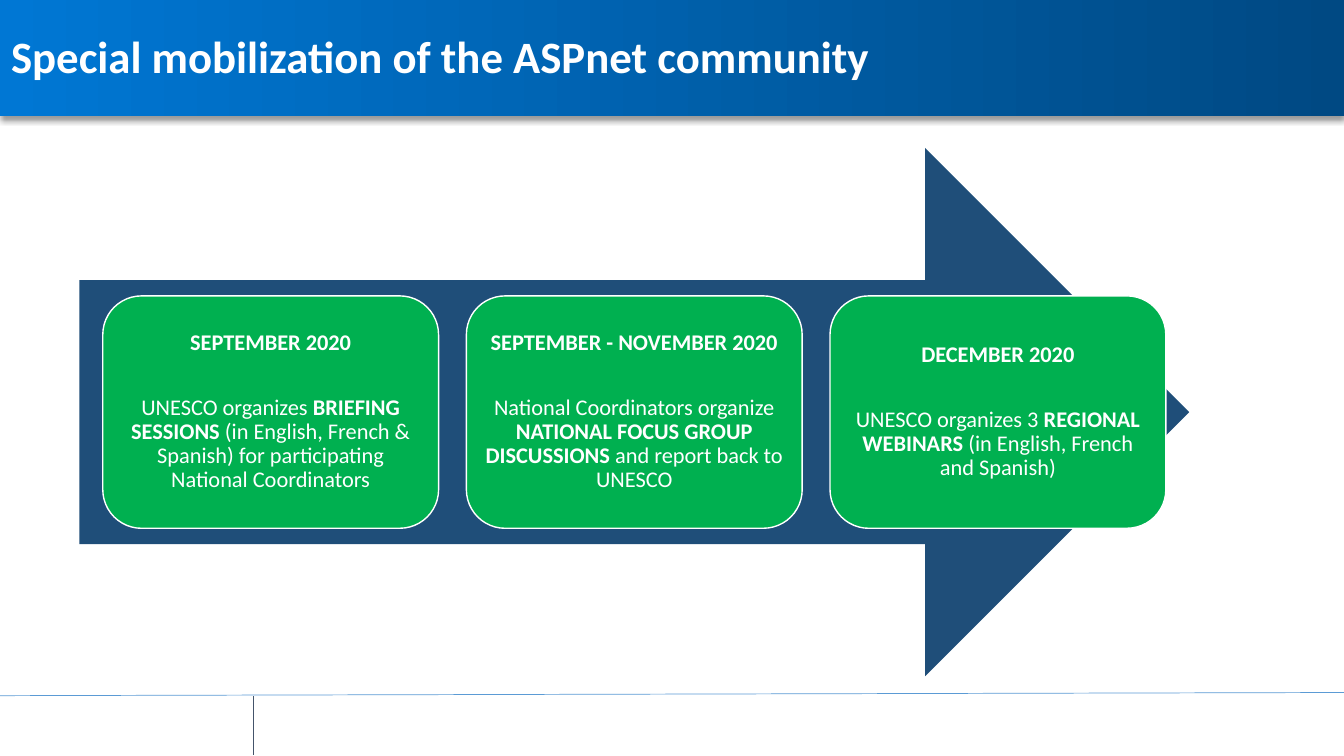
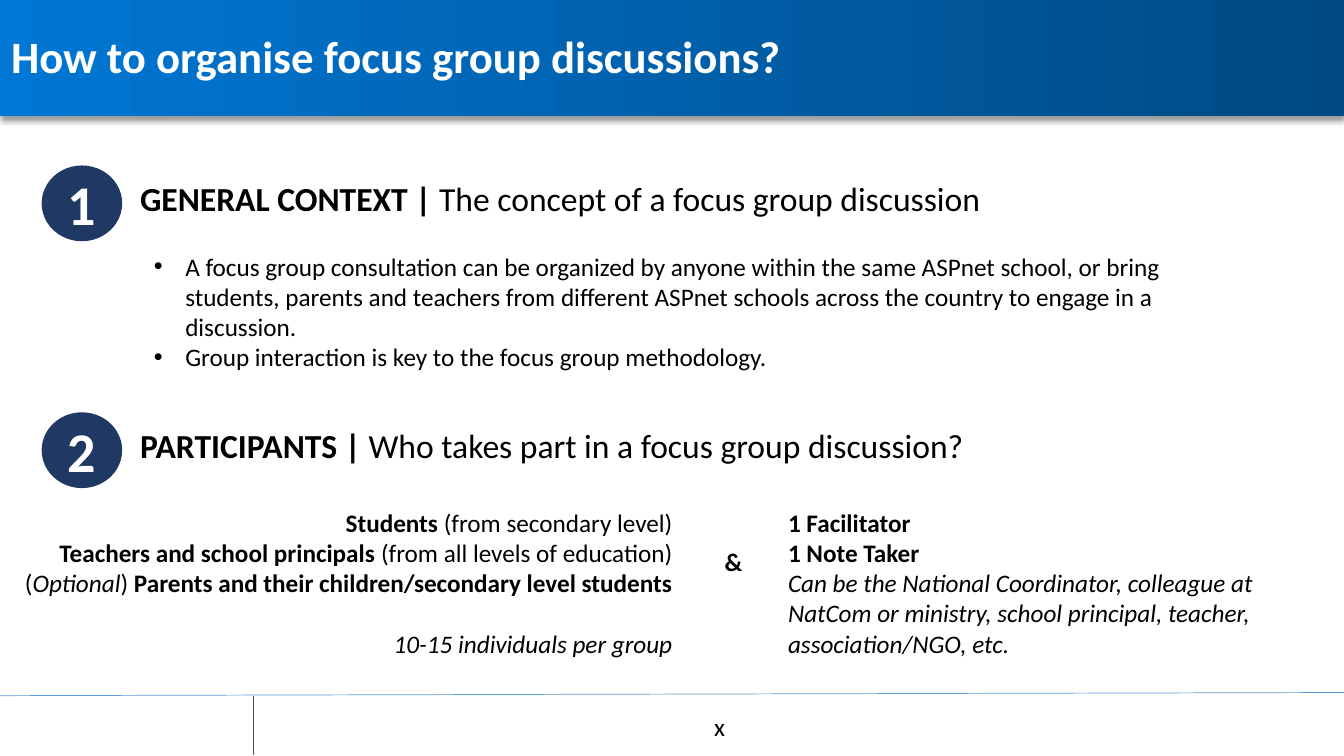
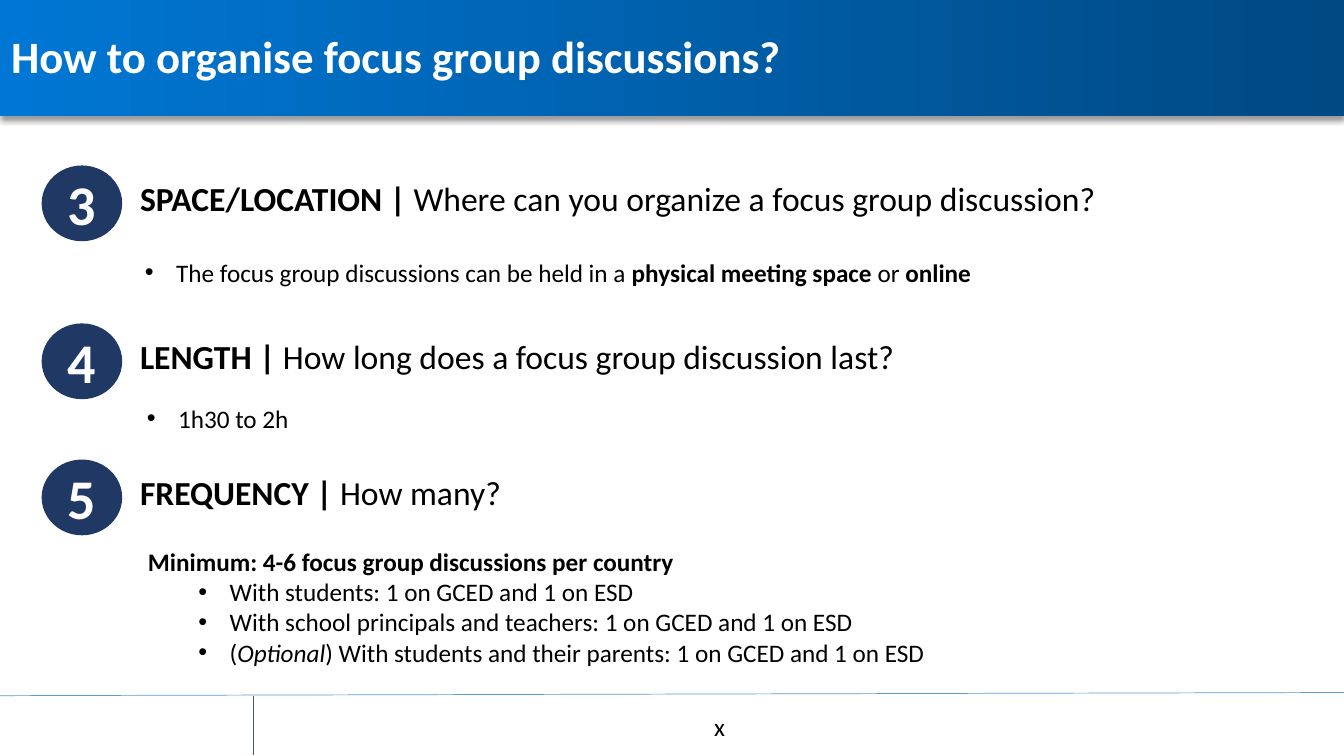
import pptx
import pptx.dml.color
import pptx.enum.shapes
import pptx.enum.text
import pptx.oxml
import pptx.oxml.ns
import pptx.util
from lxml import etree

Cm, Pt = pptx.util.Cm, pptx.util.Pt
SHAPE = pptx.enum.shapes.MSO_SHAPE
ALIGN = pptx.enum.text.PP_ALIGN
ANCHOR = pptx.enum.text.MSO_ANCHOR
qn = pptx.oxml.ns.qn

WIDTH, HEIGHT = 33.87, 19.05
FONT = "Calibri"
WHITE, BLACK = "FFFFFF", "000000"
BAND_FROM, BAND_TO = "0077D4", "004983"
RULE, DIVIDER = "5B9BD5", "44546A"
ARROW, CARD, BADGE = "1F4E79", "00B050", "203864"

TITLE = {"size": Pt(32), "bold": True}
HEADING = {"size": Pt(24)}
BODY = {"size": Pt(18)}
CARD_TEXT = {"size": Pt(16)}
NUMBER = {"size": Pt(40), "bold": True}

SHADOW = (
    '<a:effectLst %s><a:outerShdw blurRad="50800" dist="38100" dir="5400000" '
    'algn="t" rotWithShape="0"><a:srgbClr val="000000"><a:alpha val="40000"/>'
    "</a:srgbClr></a:outerShdw></a:effectLst>" % pptx.oxml.ns.nsdecls("a")
)


def rgb(value):
    return pptx.dml.color.RGBColor.from_string(value)


def apply(target, values):
    for name, value in values.items():
        setattr(target, name, value)


def set_bullet(p, left):
    """Hang a round bullet so that the text starts at left (cm)."""
    pPr = p._p.get_or_add_pPr()
    pPr.set("marL", str(Cm(left)))
    pPr.set("indent", str(-Cm(0.79)))
    etree.SubElement(pPr, qn("a:buFont")).set("typeface", "Arial")
    etree.SubElement(pPr, qn("a:buChar")).set("char", "•")


def write(tf, paragraphs, font, color=BLACK, bullet=None, **layout):
    """Add paragraphs, each a list of (text, style); style may hold b and i."""
    for runs in paragraphs:
        p = tf.paragraphs[0]
        if p.runs:
            p = tf.add_paragraph()
        apply(p, layout)
        if bullet is not None:
            set_bullet(p, bullet)
        for text, style in runs:
            r = p.add_run()
            r.text = text
            style_font = {"name": FONT, "bold": "b" in style, "italic": "i" in style}
            apply(r.font, {**style_font, **font})
            r.font.color.rgb = rgb(color)
    return p


def add_text(s, box, wrap=True):
    tf = s.shapes.add_textbox(*map(Cm, box)).text_frame
    tf.word_wrap = wrap
    return tf


def add_shape(s, kind, box, fill, line=None):
    sp = s.shapes.add_shape(kind, *map(Cm, box))
    sp.shadow.inherit = False
    sp.fill.solid()
    sp.fill.fore_color.rgb = rgb(fill)
    if line:
        sp.line.color.rgb = rgb(line)
        sp.line.width = Pt(1)
    else:
        sp.line.fill.background()
    return sp


def add_line(s, ends, color):
    line = s.shapes.add_connector(
        pptx.enum.shapes.MSO_CONNECTOR.STRAIGHT, *map(Cm, ends))
    line.line.color.rgb = rgb(color)
    line.line.width = Pt(0.5)
    etree.SubElement(line._element.spPr, qn("a:effectLst"))


def title_band(s, title):
    band = add_shape(s, SHAPE.RECTANGLE, (0, 0, WIDTH, 2.92), BAND_FROM)
    band.fill.gradient()
    band.fill.gradient_angle = 0
    for stop, color in zip(band.fill.gradient_stops, (BAND_FROM, BAND_TO)):
        stop.color.rgb = rgb(color)
    spPr = band._element.spPr
    spPr.replace(spPr.find(qn("a:effectLst")), pptx.oxml.parse_xml(SHADOW))
    tf = add_text(s, (0.03, 0.76, 31.9, 1.24))
    write(tf, [[(title, "")]], TITLE, WHITE, line_spacing=0.9)


def footer(s, mark):
    add_line(s, (6.38, 17.55, 6.38, 19.02), DIVIDER)
    add_line(s, (0, 17.53, WIDTH, 17.45), RULE)
    if mark:
        write(add_text(s, (17.75, 17.81, 0.79, 1.02), wrap=False),
              [[(mark, "")]], BODY)


def new_slide(prs, title, mark=None):
    s = prs.slides.add_slide(prs.slide_layouts[6])
    title_band(s, title)
    footer(s, mark)
    return s


def timeline(s, box, steps):
    """Draw a block arrow with one centred card per step."""
    left, top, width, height = box
    margin, gap = 0.59, 0.7
    card_h = 0.44 * height
    card_w = (width - 2 * margin - gap * (len(steps) - 1)) / len(steps)
    add_shape(s, SHAPE.RIGHT_ARROW, box, ARROW)
    for i, (date, runs) in enumerate(steps):
        x = left + margin + i * (card_w + gap)
        card = add_shape(s, SHAPE.ROUNDED_RECTANGLE,
                         (x, top + (height - card_h) / 2, card_w, card_h), CARD, WHITE)
        tf = card.text_frame
        sides = ("left", "right", "top", "bottom")
        apply(tf, {f"margin_{side}": Cm(0.18) for side in sides})
        apply(tf, {"word_wrap": True, "vertical_anchor": ANCHOR.MIDDLE})
        layout = {"alignment": ALIGN.CENTER, "line_spacing": 0.9}
        write(tf, [[(date, "b")]], CARD_TEXT, WHITE, **layout)
        write(tf, [runs], CARD_TEXT, WHITE, space_before=Pt(29), **layout)


def section_heading(s, top, number, topic, question):
    left = 1.05
    badge = add_shape(s, SHAPE.OVAL, (left, top, 2.03, 1.91), BADGE)
    badge.text_frame.vertical_anchor = ANCHOR.MIDDLE
    write(badge.text_frame, [[(str(number), "")]], NUMBER, WHITE,
          alignment=ALIGN.CENTER)
    write(add_text(s, (left + 2.23, top + 0.18, 29.57, 1.27)),
          [[(topic + " | ", "b"), (question, "")]], HEADING)


def bullet_list(s, box, items):
    write(add_text(s, box), items, BODY, bullet=0.79)


def participants(s, box):
    """Place the group at left and its leaders at right, joined by &."""
    left, top, width, height = box
    group = add_text(s, (left, top, 17.2, height))
    write(group, [
        [("Students ", "b"), ("(from secondary level)", "")],
        [("Teachers and school principals ", "b"), ("(from all levels of education)", "")],
        [("(", ""), ("Optional", "i"), (") ", ""),
         ("Parents and their children/secondary level students", "b")],
    ], BODY, alignment=ALIGN.RIGHT)
    write(group, [[("10-15 individuals per group", "i")]], BODY,
          alignment=ALIGN.RIGHT, space_before=Pt(22))
    write(add_text(s, (left + 18.01, top + 0.99, 1.22, 1.02)), [[("&", "b")]], BODY)
    write(add_text(s, (left + 19.61, top, width - 19.61, height)), [
        [("1 Facilitator", "b")],
        [("1 Note Taker", "b")],
        [("Can be the National Coordinator, colleague at NatCom or ministry, "
          "school principal, teacher, association/NGO, etc.", "i")],
    ], BODY)


def frequency(s, box):
    tf = add_text(s, box)
    write(tf, [[("Minimum: 4-6 focus group discussions per country", "b")]], BODY)
    write(tf, [
        [("With students: 1 on GCED and 1 on ESD", "")],
        [("With school principals and teachers: 1 on GCED and 1 on ESD", "")],
        [("(", ""), ("Optional", "i"),
         (") With students and their parents: 1 on GCED and 1 on ESD", "")],
    ], BODY, bullet=2.06)


def mobilization_slide(prs):
    s = new_slide(prs, "Special mobilization of the ASPnet community")
    timeline(s, (2, 3.73, 27.97, 13.31), [
        ("SEPTEMBER 2020", [
            ("UNESCO organizes ", ""), ("BRIEFING SESSIONS ", "b"),
            ("(in English, French & Spanish) for participating "
             "National Coordinators", "")]),
        ("SEPTEMBER - NOVEMBER 2020", [
            ("National Coordinators organize ", ""),
            ("NATIONAL FOCUS GROUP DISCUSSIONS ", "b"),
            ("and report back to UNESCO", "")]),
        ("DECEMBER 2020", [
            ("UNESCO organizes 3 ", ""), ("REGIONAL WEBINARS ", "b"),
            ("(in English, French and Spanish)", "")]),
    ])


def context_slide(prs, title):
    s = new_slide(prs, title, "x")
    section_heading(s, 4.17, 1, "GENERAL CONTEXT",
                    "The concept of a focus group discussion")
    bullet_list(s, (3.63, 6.2, 26.52, 3.33), [
        [("A focus group consultation can be organized by anyone within the same "
          "ASPnet school, or bring students, parents and teachers from different "
          "ASPnet schools across the country to engage in a discussion.", "")],
        [("Group interaction is key to the focus group methodology.", "")],
    ])
    section_heading(s, 10.39, 2, "PARTICIPANTS",
                    "Who takes part in a focus group discussion?")
    participants(s, (0, 12.65, 32, 4.2))


def logistics_slide(prs, title):
    s = new_slide(prs, title, "x")
    section_heading(s, 4.17, 3, "SPACE/LOCATION",
                    "Where can you organize a focus group discussion?")
    bullet_list(s, (3.4, 6.35, 24.79, 1.02), [
        [("The focus group discussions can be held in a ", ""),
         ("physical meeting space", "b"), (" or ", ""), ("online", "b")],
    ])
    section_heading(s, 8.15, 4, "LENGTH", "How long does a focus group discussion last?")
    bullet_list(s, (3.45, 10.03, 24.79, 1.02), [[("1h30 to 2h", "")]])
    section_heading(s, 11.58, 5, "FREQUENCY", "How many?")
    frequency(s, (3.48, 13.64, 24.79, 3.33))


def main():
    prs = pptx.Presentation()
    apply(prs, {"slide_width": Cm(WIDTH), "slide_height": Cm(HEIGHT)})
    mobilization_slide(prs)
    for build in (context_slide, logistics_slide):
        build(prs, "How to organise focus group discussions?")
    prs.save("out.pptx")


if __name__ == "__main__":
    main()
